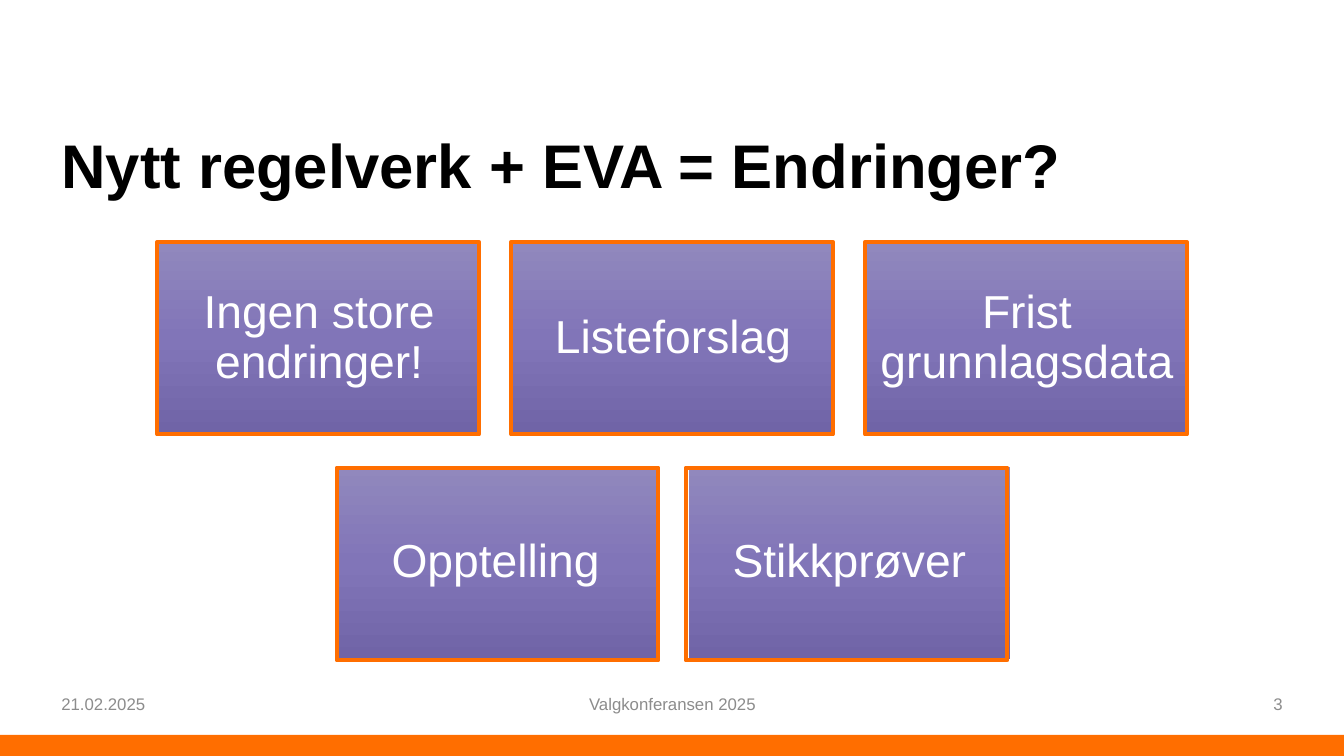
from copy import deepcopy
from typing import NamedTuple

from pptx import Presentation
from pptx.dml.color import RGBColor
from pptx.enum import shapes, text
from pptx.oxml.ns import qn
from pptx.shapes.autoshape import Shape
from pptx.slide import Slide
from pptx import util as u

PX = 9144  # EMU per px, 100 px to the inch
SLIDE_W, SLIDE_H = 1333, 750
CARD_W, CARD_H = 319, 191
FONT = "Arial"

ORANGE = RGBColor(0xFF, 0x6E, 0x00)
BLACK = RGBColor(0x00, 0x00, 0x00)
WHITE = RGBColor(0xFF, 0xFF, 0xFF)
GREY = RGBColor(0x8C, 0x8C, 0x8C)
PURPLES = (
    RGBColor(0x91, 0x88, 0xBD),
    RGBColor(0x81, 0x75, 0xB8),
    RGBColor(0x70, 0x64, 0xA7),
)

LEFT, CENTER, RIGHT = text.PP_ALIGN.LEFT, text.PP_ALIGN.CENTER, text.PP_ALIGN.RIGHT


class Box(NamedTuple):
    left: int
    top: int
    width: int
    height: int

    def emu(self) -> list[u.Emu]:
        return [u.Emu(length * PX) for length in self]


class Row(NamedTuple):
    topics: tuple[str, ...]
    card_left: int
    card_top: int
    card_step: int
    frame_left: int
    frame_top: int
    frame_step: int


class FooterItem(NamedTuple):
    words: str
    box: Box
    align: text.PP_ALIGN


ROWS = (
    Row(("Ingen store endringer!", "Listeforslag", "Frist grunnlagsdata"),
        157, 240, 351, 156, 240, 351),
    Row(("Opptelling", "Stikkprøver"), 332, 463, 351, 334, 464, 346),
)
FOOTER = (
    FooterItem("21.02.2025", Box(51, 678, 300, 40), LEFT),
    FooterItem("Valgkonferansen 2025", Box(442, 678, 450, 40), CENTER),
    FooterItem("3", Box(982, 678, 300, 40), RIGHT),
)


def write(shape: Shape, words: str, *, size: int, color: RGBColor,
          align: text.PP_ALIGN = LEFT, bold: bool = False,
          line_spacing: float = 1.0) -> None:
    frame = shape.text_frame
    frame.word_wrap = True
    frame.vertical_anchor = text.MSO_ANCHOR.MIDDLE
    paragraph = frame.paragraphs[0]
    paragraph.alignment = align
    paragraph.line_spacing = line_spacing
    run = paragraph.add_run()
    run.text = words
    run.font.name = FONT
    run.font.size = u.Pt(size)
    run.font.bold = bold
    run.font.color.rgb = color


def add_rectangle(slide: Slide, box: Box) -> Shape:
    """Add a rectangle without shadow, fill or line."""
    rectangle = slide.shapes.add_shape(shapes.MSO_SHAPE.RECTANGLE, *box.emu())
    rectangle.shadow.inherit = False
    rectangle.fill.background()
    rectangle.line.fill.background()
    return rectangle


def fill_purple(card: Shape) -> None:
    """Shade the card from top to bottom through all PURPLES."""
    card.fill.gradient()
    card.fill.gradient_angle = 270
    stop_list = card.element.spPr.find(qn("a:gradFill")).find(qn("a:gsLst"))
    stop_list.insert(1, deepcopy(stop_list[0]))
    for index, (stop, purple) in enumerate(zip(card.fill.gradient_stops, PURPLES)):
        stop.position = index / 2
        stop.color.rgb = purple


def add_card(slide: Slide, box: Box, topic: str) -> None:
    card = add_rectangle(slide, box)
    fill_purple(card)
    frame = card.text_frame
    frame.margin_left = frame.margin_right = u.Emu(13 * PX)
    frame.margin_top = frame.margin_bottom = u.Emu(14 * PX)
    write(card, topic, size=33, color=WHITE, align=CENTER, line_spacing=0.9)


def add_frame(slide: Slide, box: Box) -> None:
    outline = add_rectangle(slide, box).line
    outline.color.rgb = ORANGE
    outline.width = u.Pt(3)


def main() -> None:
    deck = Presentation()
    deck.slide_width, deck.slide_height = u.Emu(SLIDE_W * PX), u.Emu(SLIDE_H * PX)
    slide = deck.slides.add_slide(deck.slide_layouts[6])

    bottom_bar = add_rectangle(slide, Box(0, 729, SLIDE_W, 21))
    bottom_bar.fill.solid()
    bottom_bar.fill.fore_color.rgb = ORANGE

    title = slide.shapes.add_textbox(*Box(51, 95, 1231, 145).emu())
    write(title, "Nytt regelverk + EVA = Endringer?", size=44, color=BLACK,
          bold=True, line_spacing=0.9)

    for item in FOOTER:
        footer = slide.shapes.add_textbox(*item.box.emu())
        write(footer, item.words, size=12, color=GREY, align=item.align)

    for row in ROWS:
        for column, topic in enumerate(row.topics):
            card_left = row.card_left + column * row.card_step
            frame_left = row.frame_left + column * row.frame_step
            add_card(slide, Box(card_left, row.card_top, CARD_W, CARD_H), topic)
            add_frame(slide, Box(frame_left, row.frame_top, CARD_W, CARD_H))

    deck.save("out.pptx")


if __name__ == "__main__":
    main()
